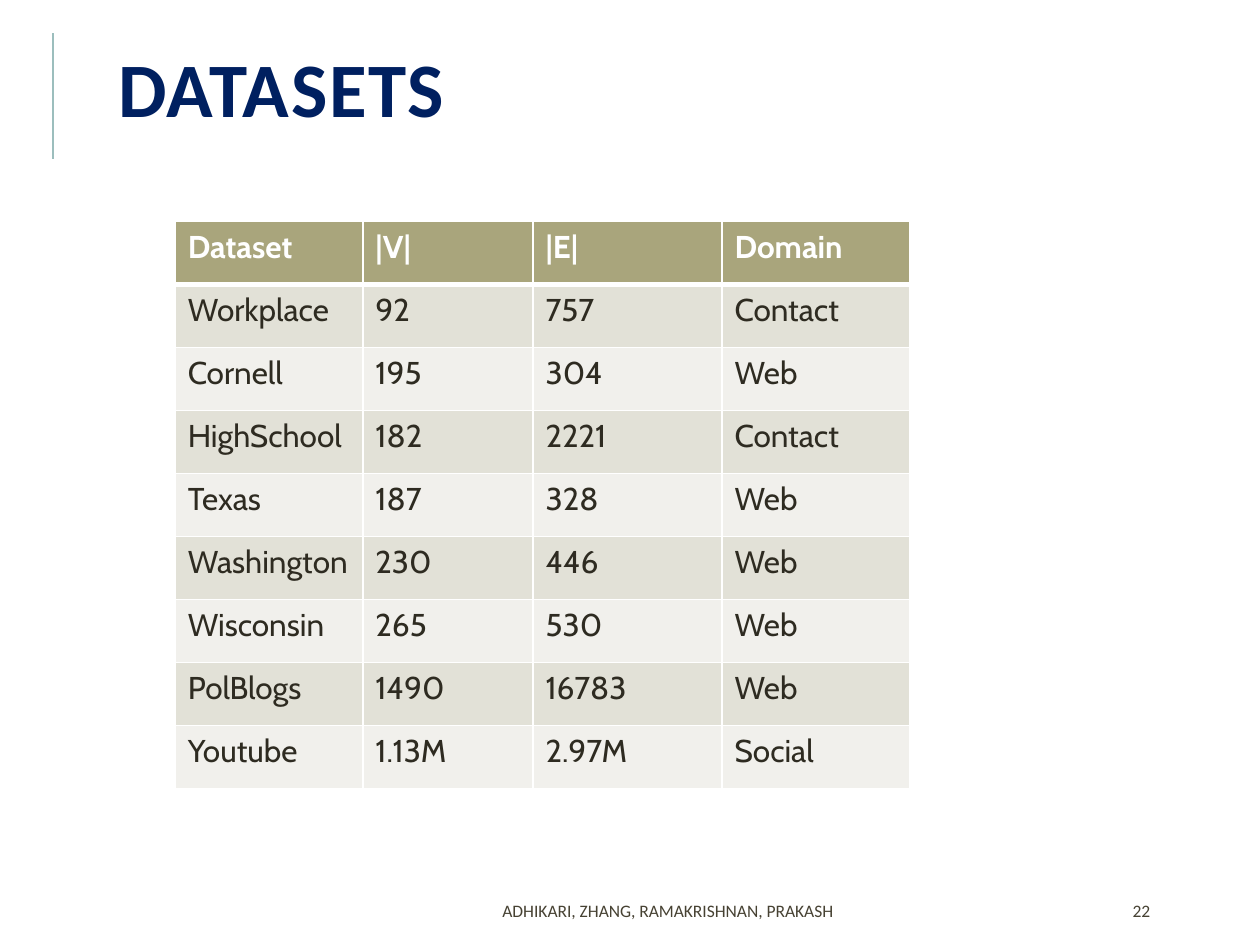
from dataclasses import dataclass

from lxml import etree
from pptx import Presentation
from pptx.dml.color import RGBColor
from pptx.enum.shapes import MSO_CONNECTOR
from pptx.enum.text import MSO_ANCHOR, PP_ALIGN
from pptx.oxml import parse_xml
from pptx.oxml.ns import nsdecls, qn
from pptx.util import Inches, Pt


@dataclass(frozen=True)
class Theme:
    heading_font: str = "Calibri"
    table_font: str = "Cabin"
    title: str = "002060"
    footer: str = "474233"
    accent: str = "9CBEBD"
    header_fill: str = "A9A57C"
    bands: tuple = ("E2E1D7", "F1F0EC")
    white: str = "FFFFFF"
    body: str = "2E2B21"
    title_size: int = 44
    table_size: int = 18
    footer_size: int = 10


THEME = Theme()


def write(tf, text, *, font, size, color, bold=False, align=PP_ALIGN.LEFT,
          line_spacing=None, tracking=None):
    p = tf.paragraphs[0]
    p.alignment = align
    if line_spacing:
        p.line_spacing = line_spacing
    r = p.add_run()
    r.text = text
    r.font.name, r.font.size, r.font.bold = font, Pt(size), bold
    r.font.color.rgb = RGBColor.from_string(color)
    if tracking:
        r.font._element.set("spc", str(tracking * 100))


def add_border(cell, side, width):
    cell._tc.get_or_add_tcPr().append(parse_xml(
        f'<a:{side} {nsdecls("a")} w="{Pt(width)}"><a:solidFill>'
        f'<a:srgbClr val="{THEME.white}"/></a:solidFill></a:{side}>'))


prs = Presentation()
prs.slide_width, prs.slide_height = Inches(10), Inches(7.5)
s = prs.slides.add_slide(prs.slide_layouts[6])

# Accent line beside the title
rule = s.shapes.add_connector(MSO_CONNECTOR.STRAIGHT, Inches(0.42), Inches(1.26),
                              Inches(0.42), Inches(0.26))
rule.line.color.rgb = RGBColor.from_string(THEME.accent)
rule.line.width = Pt(1.5)
etree.SubElement(rule._element.spPr, qn("a:effectLst"))

# Title and footer
footer = dict(font=THEME.heading_font, size=THEME.footer_size, color=THEME.footer)
texts = [
    ("DATASETS", (0.84, 0.26, 8.85, 1),
     dict(font=THEME.heading_font, size=THEME.title_size, color=THEME.title,
          bold=True, line_spacing=0.8, tracking=1)),
    ("ADHIKARI, ZHANG, RAMAKRISHNAN, PRAKASH", (2.88, 7.08, 4.84, 0.3),
     dict(footer, align=PP_ALIGN.CENTER)),
    ("22", (8.89, 7.08, 0.8, 0.3), footer),
]
for text, box, style in texts:
    tf = s.shapes.add_textbox(*map(Inches, box)).text_frame
    tf.word_wrap = True
    tf.vertical_anchor = MSO_ANCHOR.MIDDLE
    write(tf, text, **style)

# Dataset table
rows = [
    ("Dataset", "|V|", "|E|", "Domain"),
    ("Workplace", "92", "757", "Contact"),
    ("Cornell", "195", "304", "Web"),
    ("HighSchool", "182", "2221", "Contact"),
    ("Texas", "187", "328", "Web"),
    ("Washington", "230", "446", "Web"),
    ("Wisconsin", "265", "530", "Web"),
    ("PolBlogs", "1490", "16783", "Web"),
    ("Youtube", "1.13M", "2.97M", "Social"),
]
col_widths = (1.49, 1.35, 1.5, 1.49)
row_height = 0.5
table = s.shapes.add_table(len(rows), len(col_widths), Inches(1.39), Inches(1.76),
                           Inches(sum(col_widths)),
                           Inches(row_height * len(rows))).table
for column, width in zip(table.columns, col_widths):
    column.width = Inches(width)

for i, row in enumerate(rows):
    table.rows[i].height = Inches(row_height)
    is_header = i == 0
    fill = THEME.header_fill if is_header else THEME.bands[(i - 1) % 2]
    for j, text in enumerate(row):
        cell = table.cell(i, j)
        write(cell.text_frame, text, font=THEME.table_font, size=THEME.table_size,
              color=THEME.white if is_header else THEME.body, bold=is_header)
        # Borders must come before the fill in the cell properties
        for side, width in (("lnL", 1), ("lnR", 1), ("lnT", 3 if i == 1 else 1),
                            ("lnB", 3 if is_header else 1)):
            add_border(cell, side, width)
        cell.fill.solid()
        cell.fill.fore_color.rgb = RGBColor.from_string(fill)

prs.save("out.pptx")
